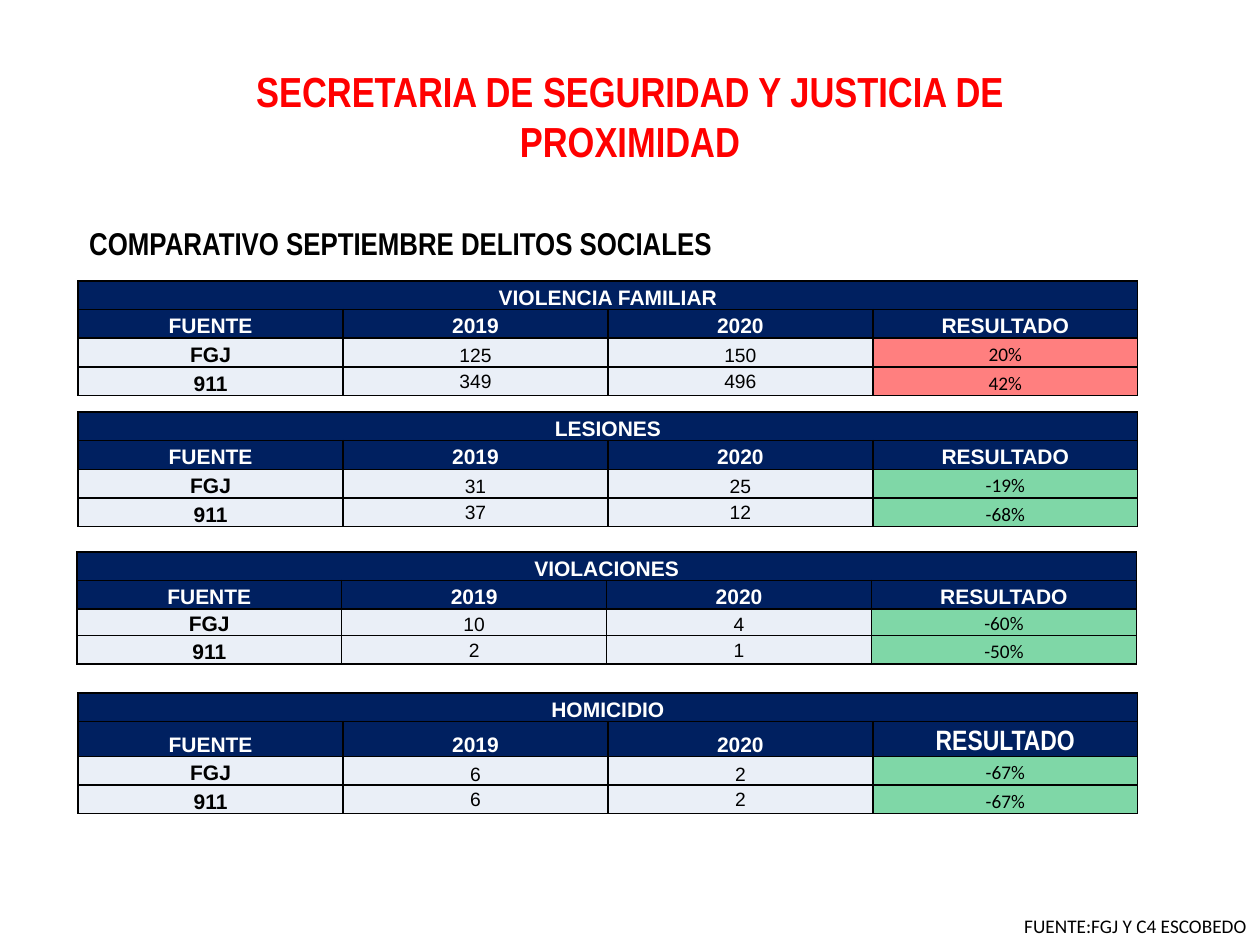
"""Build the September comparison slide of social crimes."""
from dataclasses import dataclass
from typing import NamedTuple

from lxml import etree
from pptx import Presentation
from pptx.dml.color import RGBColor
from pptx.enum.text import MSO_ANCHOR, MSO_AUTO_SIZE, PP_ALIGN
from pptx.oxml.ns import qn
from pptx.util import Inches, Pt

CENTER, LEFT = PP_ALIGN.CENTER, PP_ALIGN.LEFT
TOP, MIDDLE, BOTTOM = MSO_ANCHOR.TOP, MSO_ANCHOR.MIDDLE, MSO_ANCHOR.BOTTOM
NO_AUTOFIT = MSO_AUTO_SIZE.NONE

TITLE_ONLY = 5
TABLE_WIDTH = 8.41
ROW_HEIGHT = 0.91 / 4
CELL_INSET = 0.01
BORDER_SIDES = ("lnL", "lnR", "lnT", "lnB")
HEADINGS = ("FUENTE", "2019", "2020", "RESULTADO")


class TextStyle(NamedTuple):
    font: str
    size: float
    color: str
    bold: bool = False


@dataclass(frozen=True)
class Theme:
    navy: str = "002060"
    pale: str = "EAEFF7"
    increase: str = "FF0000"
    decrease: str = "00B050"
    border: str = "000000"
    border_width: float = 1
    result_opacity: int = 50
    title: TextStyle = TextStyle("Arial Narrow", 24, "FF0000", True)
    subtitle: TextStyle = TextStyle("Arial Narrow", 18, "000000", True)
    heading: TextStyle = TextStyle("Arial", 12, "FFFFFF", True)
    large_heading: TextStyle = TextStyle("Arial Narrow", 16, "FFFFFF", True)
    source: TextStyle = TextStyle("Arial", 12, "000000", True)
    count: TextStyle = TextStyle("Arial", 11, "000000")
    result: TextStyle = TextStyle("Calibri", 11, "000000")


THEME = Theme()


class Record(NamedTuple):
    source: str
    count_2019: str
    count_2020: str
    result: str


@dataclass(frozen=True)
class Crime:
    name: str
    top: float
    fgj: Record
    emergency: Record
    left: float = 0.62
    fgj_height: float = ROW_HEIGHT
    result_heading: TextStyle = THEME.heading


CRIMES = (
    Crime("VIOLENCIA FAMILIAR", 2.23,
          Record("FGJ", "125", "150", "20%"), Record("911", "349", "496", "42%")),
    Crime("LESIONES", 3.27,
          Record("FGJ", "31", "25", "-19%"), Record("911", "37", "12", "-68%")),
    Crime("VIOLACIONES", 4.38,
          Record("FGJ", "10", "4", "-60%"), Record("911", "2", "1", "-50%"),
          left=0.61, fgj_height=0.21),
    Crime("HOMICIDIO", 5.5,
          Record("FGJ", "6", "2", "-67%"), Record("911", "6", "2", "-67%"),
          result_heading=THEME.large_heading),
)


def write(frame, text: str, style: TextStyle, align=CENTER) -> None:
    paragraph = frame.paragraphs[0]
    paragraph.text = text
    paragraph.alignment = align
    paragraph.font.name = style.font
    paragraph.font.size = Pt(style.size)
    paragraph.font.bold = style.bold
    paragraph.font.color.rgb = RGBColor.from_string(style.color)


def paint(cell, color: str, opacity: int = 100) -> None:
    cell.fill.solid()
    cell.fill.fore_color.rgb = RGBColor.from_string(color)
    properties = cell._tc.get_or_add_tcPr()
    if opacity < 100:
        tint = properties.find(f"{qn('a:solidFill')}/{qn('a:srgbClr')}")
        etree.SubElement(tint, qn("a:alpha"), val=str(opacity * 1000))
    for position, side in enumerate(BORDER_SIDES):
        line = etree.Element(qn(f"a:{side}"), w=str(Pt(THEME.border_width)))
        line_fill = etree.SubElement(line, qn("a:solidFill"))
        etree.SubElement(line_fill, qn("a:srgbClr"), val=THEME.border)
        properties.insert(position, line)


def fill_cell(cell, text: str, style: TextStyle, color: str,
              anchor=BOTTOM, opacity: int = 100) -> None:
    cell.margin_left = cell.margin_right = cell.margin_top = Inches(CELL_INSET)
    cell.margin_bottom = 0
    cell.vertical_anchor = anchor
    write(cell.text_frame, text, style)
    paint(cell, color, opacity)


def add_crime_table(slide, crime: Crime) -> None:
    heights = (ROW_HEIGHT, ROW_HEIGHT, crime.fgj_height, ROW_HEIGHT)
    table = slide.shapes.add_table(
        len(heights), len(HEADINGS), Inches(crime.left), Inches(crime.top),
        Inches(TABLE_WIDTH), Inches(sum(heights))).table
    table.first_row = table.horz_banding = False
    for row, height in zip(table.rows, heights):
        row.height = Inches(height)

    table.cell(0, 0).merge(table.cell(0, len(HEADINGS) - 1))
    heading_styles = (THEME.heading,) * 3 + (crime.result_heading,)
    for column, (heading, style) in enumerate(zip(HEADINGS, heading_styles)):
        name = crime.name if column == 0 else ""
        fill_cell(table.cell(0, column), name, THEME.heading, THEME.navy)
        fill_cell(table.cell(1, column), heading, style, THEME.navy)

    for row, (record, anchor) in enumerate(
            ((crime.fgj, BOTTOM), (crime.emergency, MIDDLE)), start=2):
        fill_cell(table.cell(row, 0), record.source, THEME.source, THEME.pale)
        for column in (1, 2):
            fill_cell(table.cell(row, column), record[column], THEME.count,
                      THEME.pale, anchor)
        falling = record.result.startswith("-")
        fill_cell(table.cell(row, 3), record.result, THEME.result,
                  THEME.decrease if falling else THEME.increase,
                  opacity=THEME.result_opacity)


def add_title(slide, text: str) -> None:
    title = slide.shapes.title
    title.left, title.top = Inches(1.9), Inches(0.47)
    title.width, title.height = Inches(6.2), Inches(0.91)
    title.text_frame.auto_size = NO_AUTOFIT
    title.text_frame.vertical_anchor = TOP
    write(title.text_frame, text, THEME.title)


def add_label(slide, text: str, style: TextStyle, left: float, top: float,
              width: float, height: float, wrap: bool) -> None:
    label = slide.shapes.add_textbox(
        Inches(left), Inches(top), Inches(width), Inches(height))
    label.text_frame.word_wrap = wrap
    write(label.text_frame, text, style, LEFT)


def main() -> None:
    presentation = Presentation()
    presentation.slide_width, presentation.slide_height = Inches(10), Inches(7.5)
    slide = presentation.slides.add_slide(presentation.slide_layouts[TITLE_ONLY])
    add_title(slide, "SECRETARIA DE SEGURIDAD Y JUSTICIA DE PROXIMIDAD")
    add_label(slide, "COMPARATIVO SEPTIEMBRE DELITOS SOCIALES", THEME.subtitle,
              0.61, 1.73, 7.38, 0.4, wrap=True)
    for crime in CRIMES:
        add_crime_table(slide, crime)
    add_label(slide, "FUENTE:FGJ Y C4 ESCOBEDO", THEME.result,
              8.03, 7.21, 1.98, 0.29, wrap=False)
    presentation.save("out.pptx")


if __name__ == "__main__":
    main()
